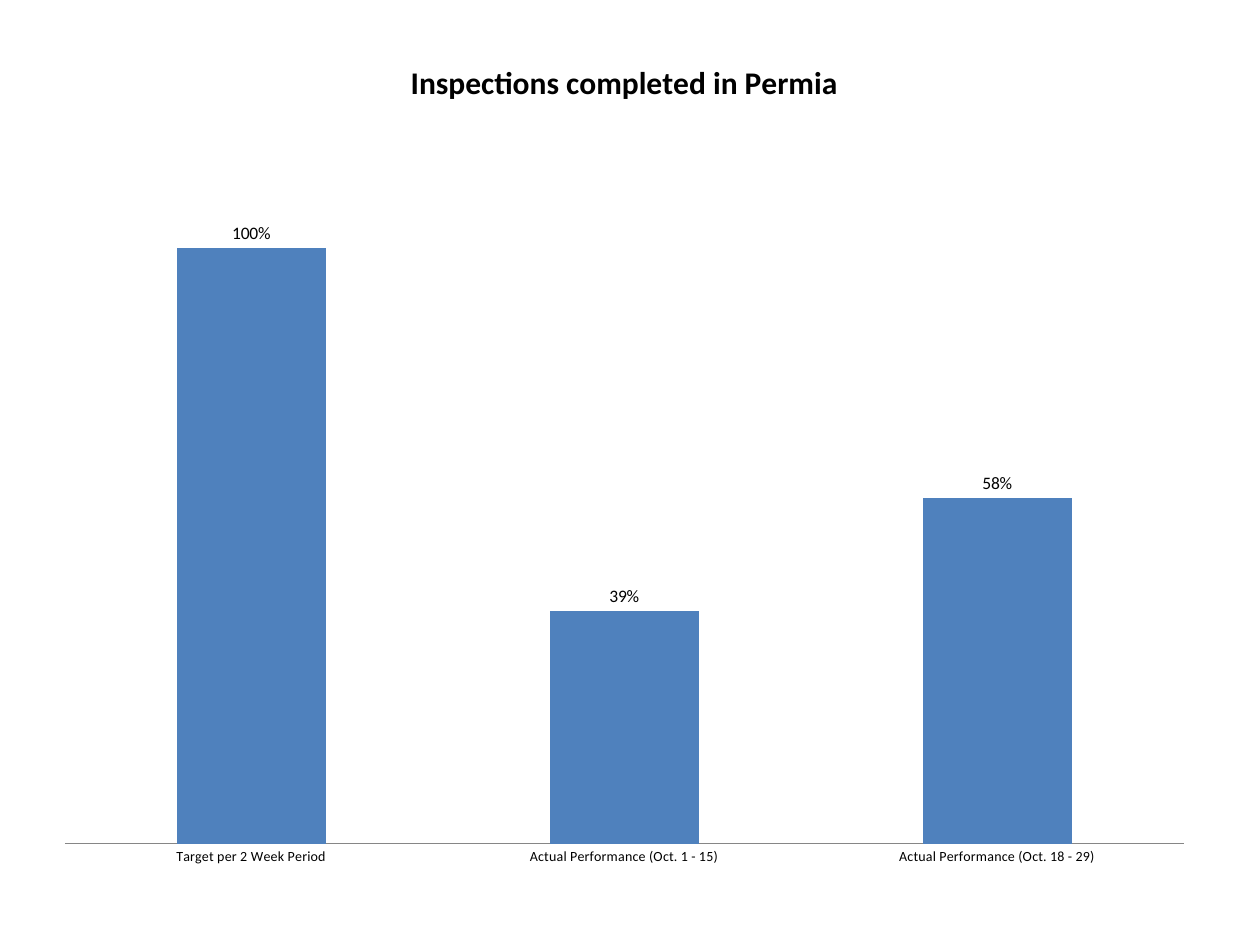
from lxml import etree
from pptx import Presentation
from pptx import util as u
from pptx.chart.data import CategoryChartData
from pptx.dml.color import RGBColor
from pptx.enum import chart as ch
from pptx.oxml.ns import qn

TITLE = "Inspections completed in Permia"
RESULTS = {
    "Target per 2 Week Period": 1,
    "Actual Performance (Oct. 1 - 15)": 0.39,
    "Actual Performance (Oct. 18 - 29)": 0.58,
}
CHART_BOX = (0.33, 0.25, 9.25, 6.75)
PLOT_AREA = {"x": 0.02, "y": 0.115, "w": 0.96, "h": 0.84}  # fractions of the chart
BLACK, BAR_BLUE, AXIS_GREY = "000000", "4F81BD", "868686"


def set_font(font, size, bold=False):
    font.name = "Calibri"
    font.size = u.Pt(size)
    font.bold = bold
    font.color.rgb = RGBColor.from_string(BLACK)


def place_plot(chart, fractions):
    """Fix the inner plot area, which python-pptx has no method for."""
    plot_area = chart.plots[0]._element.getparent()
    for old in plot_area.findall(qn("c:layout")):
        plot_area.remove(old)
    layout = etree.Element(qn("c:layout"))
    plot_area.insert(0, layout)
    manual = etree.SubElement(layout, qn("c:manualLayout"))
    settings = {"layoutTarget": "inner", "xMode": "edge", "yMode": "edge", **fractions}
    for tag, value in settings.items():
        etree.SubElement(manual, qn("c:" + tag)).set("val", str(value))


prs = Presentation()
prs.slide_width, prs.slide_height = u.Inches(10), u.Inches(7.5)
slide = prs.slides.add_slide(prs.slide_layouts[6])

results = CategoryChartData(number_format="0%")
results.categories = list(RESULTS)
results.add_series(TITLE, list(RESULTS.values()))
chart = slide.shapes.add_chart(
    ch.XL_CHART_TYPE.COLUMN_CLUSTERED, *map(u.Inches, CHART_BOX), results
).chart
set_font(chart.font, 10)
chart.has_legend = False

chart.has_title = True
heading = chart.chart_title.text_frame.paragraphs[0].add_run()
heading.text = TITLE
set_font(heading.font, 18, bold=True)
chart.chart_title.include_in_layout = False

periods = chart.category_axis
periods.major_tick_mark = ch.XL_TICK_MARK.NONE
periods.format.line.color.rgb = RGBColor.from_string(AXIS_GREY)
periods.format.line.width = u.Pt(0.75)
set_font(periods.tick_labels.font, 8)

share = chart.value_axis
share.minimum_scale, share.maximum_scale = 0, 1.2
share.has_major_gridlines = False
share.visible = False

columns = chart.plots[0]
columns.vary_by_categories = False
columns.gap_width, columns.overlap = 150, -25
bars = columns.series[0]
bars.format.fill.solid()
bars.format.fill.fore_color.rgb = RGBColor.from_string(BAR_BLUE)

labels = bars.data_labels
labels.show_value = True
labels.number_format, labels.number_format_is_linked = "0%", False
labels.position = ch.XL_LABEL_POSITION.OUTSIDE_END
set_font(labels.font, 10)

place_plot(chart, PLOT_AREA)
prs.save("out.pptx")
